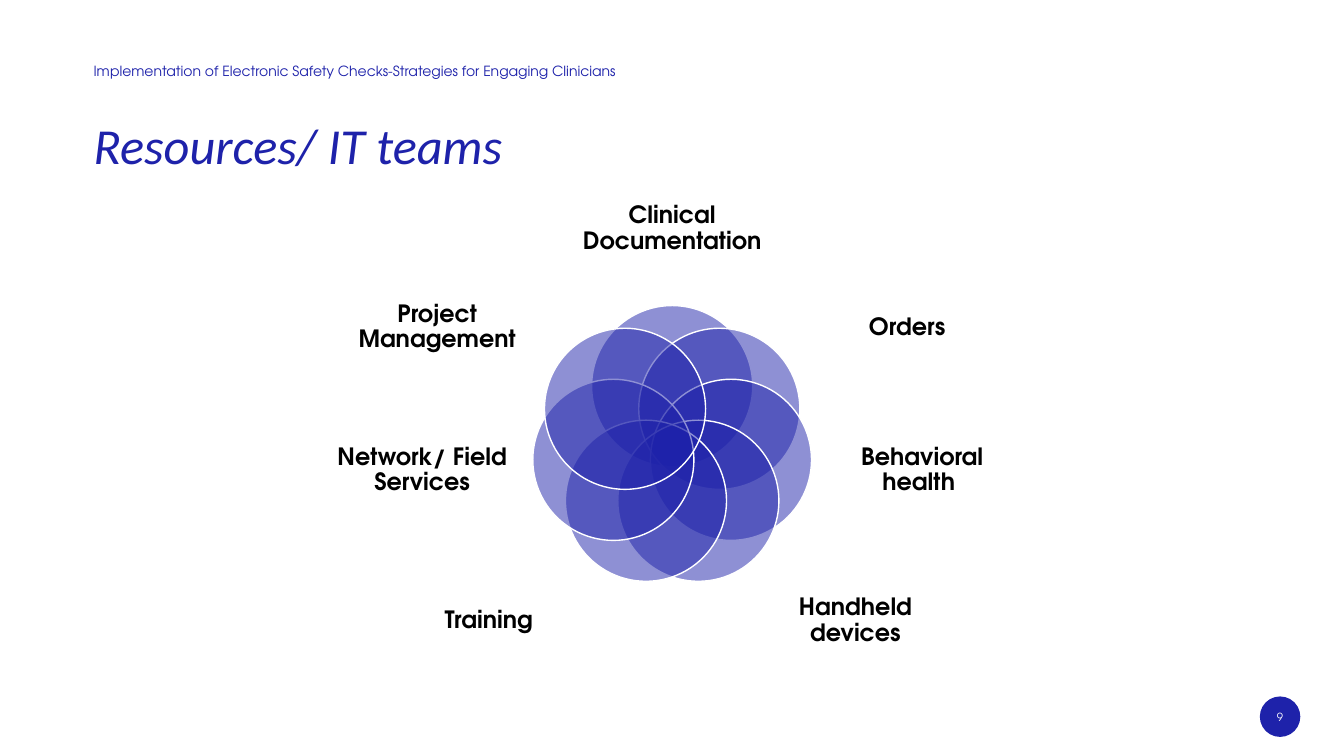
from math import cos, pi, sin

from lxml.etree import SubElement
from pptx import Presentation
from pptx.dml.color import RGBColor
from pptx.enum.shapes import MSO_SHAPE
from pptx.enum.text import MSO_ANCHOR, PP_ALIGN
from pptx.oxml.ns import qn
from pptx.util import Cm, Pt

HUES = {"blue": "1E22AA", "white": "FFFFFF", "black": "000000"}
FACE = "TeX Gyre Adventor"
TEAMS = [
    ("Clinical Documentation", 0, -5.49, 4.65, 2.49),
    ("Orders", 5.92, -3, 4.39, 2.74),
    ("Behavioral health ", 6.3, 0.6, 4.32, 2.92),
    ("Handheld devices", 4.62, 4.39, 4.65, 2.69),
    ("Training", -4.62, 4.39, 4.65, 2.69),
    ("Network/ Field Services", -6.3, 0.6, 4.32, 2.92),
    ("Project Management", -5.92, -3, 4.39, 2.74),
]


def hue(name):
    """Return the named colour."""
    return RGBColor.from_string(HUES[name])


def write(slide, text, box, size, color, face=FACE, bold=False, slant=False,
          center=False, pitch=1.0):
    """Place one paragraph of text in a box given in centimetres."""
    frame = slide.shapes.add_textbox(*map(Cm, box)).text_frame
    frame.word_wrap = True
    frame.margin_left = frame.margin_right = 0
    frame.margin_top = frame.margin_bottom = 0
    frame.vertical_anchor = MSO_ANCHOR.MIDDLE if center else MSO_ANCHOR.TOP
    para = frame.paragraphs[0]
    para.text = text
    para.alignment = PP_ALIGN.CENTER if center else PP_ALIGN.LEFT
    para.line_spacing = pitch
    font = para.font
    font.name, font.size = face, Pt(size)
    font.bold, font.italic = bold, slant
    font.color.rgb = hue(color)


def disc(slide, x, y, width):
    """Draw a blue disc around a centre point and return it."""
    left, top = x - width / 2, y - width / 2
    shape = slide.shapes.add_shape(
        MSO_SHAPE.OVAL, Cm(left), Cm(top), Cm(width), Cm(width))
    shape.shadow.inherit = False
    shape.fill.solid()
    shape.fill.fore_color.rgb = hue("blue")
    shape.line.fill.background()
    return shape


def header(slide, left, top, width):
    """Write the running head and the title below it."""
    write(slide, "Implementation of Electronic Safety Checks-Strategies for "
          "Engaging Clinicians", (left, top, 15.29, 0.58), 10, "blue", pitch=0.75)
    write(slide, "Resources/ IT teams", (left, top + 1.55, width, 2.84), 36,
          "blue", face="Calibri", slant=True, pitch=0.75)


def venn(slide, x, y, orbit, width):
    """Set overlapping discs around a centre, each with its team label."""
    for i, (team, dx, dy, wide, high) in enumerate(TEAMS):
        turn = 2 * pi * i / len(TEAMS)
        petal = disc(slide, x + orbit * sin(turn), y - orbit * cos(turn), width)
        petal.line.color.rgb = hue("white")
        petal.line.width = Pt(1)
        tint = petal.fill._xPr.find(".//" + qn("a:srgbClr"))
        SubElement(tint, qn("a:alpha")).set("val", "50000")
        box = (x + dx - wide / 2, y + dy - high / 2, wide, high)
        write(slide, team, box, 17, "black", bold=True, center=True, pitch=0.9)


def badge(slide, x, y, width):
    """Draw the page number on its disc."""
    disc(slide, x, y, width)
    write(slide, "9", (x - 0.71, y - 0.3, 1.42, 0.64), 8, "white", center=True)


def main():
    """Build the slide and save it."""
    deck = Presentation()
    deck.slide_width, deck.slide_height = Cm(33.87), Cm(19.05)
    slide = deck.slides.add_slide(deck.slide_layouts[6])
    header(slide, 2.36, 1.68, 27.3)
    venn(slide, 16.94, 11.25, 1.52, 4.06)
    badge(slide, 32.26, 18.06, 1.02)
    deck.save("out.pptx")


if __name__ == "__main__":
    main()
